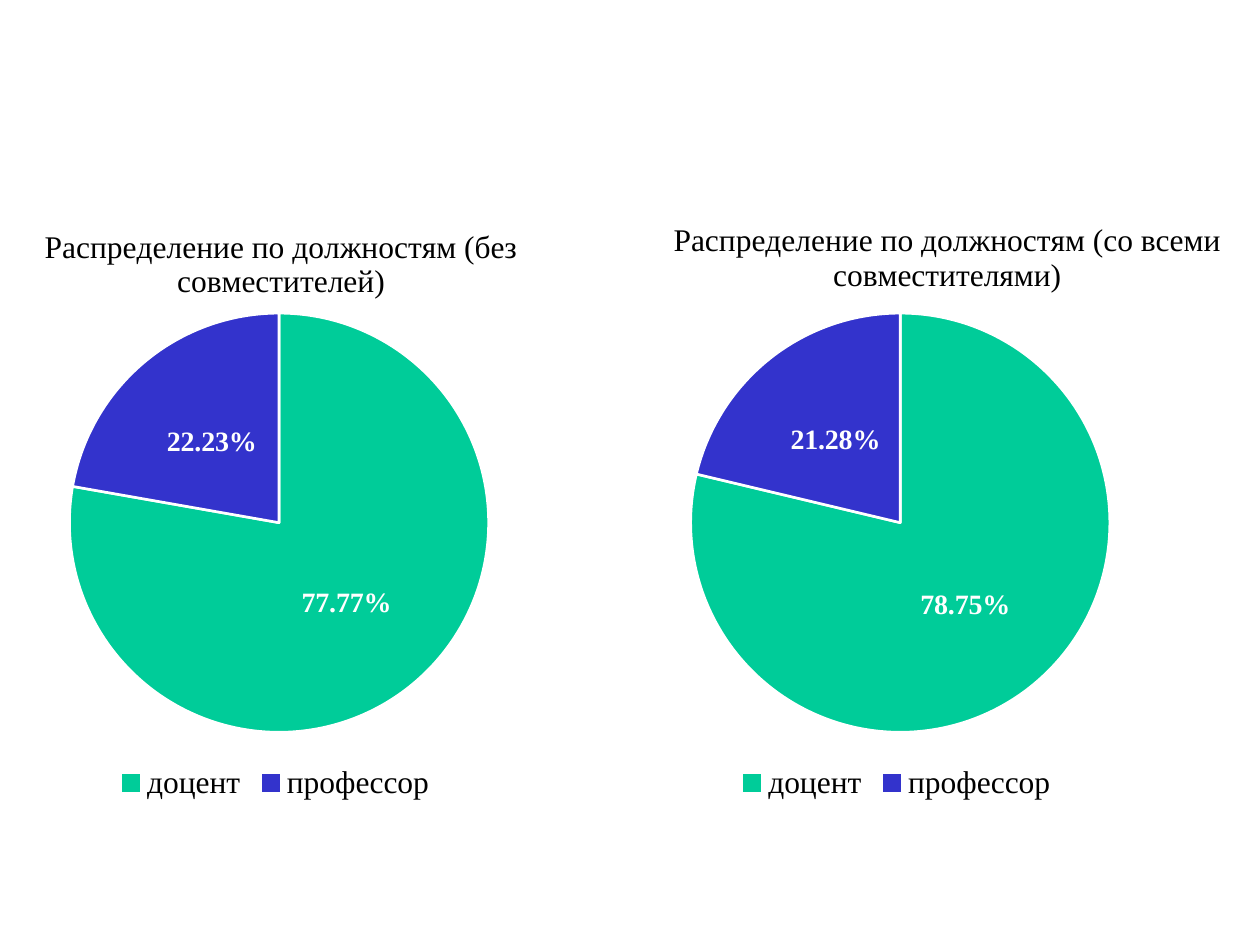
from pptx import Presentation
from pptx.chart.data import CategoryChartData
from pptx.dml.color import RGBColor
from pptx.enum.chart import XL_CHART_TYPE as ChartType
from pptx.enum.chart import XL_LABEL_POSITION as LabelPosition
from pptx.enum.chart import XL_LEGEND_POSITION as LegendPosition
from pptx.oxml import parse_xml
from pptx.oxml.ns import nsdecls, qn
from pptx.util import Pt

FONT = "Times New Roman"
COLORS = {"text": "000000", "white": "FFFFFF", "docent": "00CC99", "professor": "3333CC"}
POSITIONS = {"доцент": "docent", "профессор": "professor"}
TOP, WIDTH, HEIGHT = 112.3, 435.6, 348.5
CHARTS = [
    # left edge, title, title corner as a share of the chart, values
    (-60.5, "Распределение по должностям (без совместителей)", (0.19, 0.04), (0.7777, 0.2223)),
    (294.5, "Распределение по должностям (со всеми совместителями)", (0.2, 0.03), (0.7875, 0.2128)),
]


def color(name):
    return RGBColor.from_string(COLORS[name])


def style_font(font, size, color_name="text", bold=False):
    font.name = FONT
    font.size = Pt(size)
    font.bold = bold
    font.color.rgb = color(color_name)


def set_layout(element, index, **shares):
    """Give a chart part a manual layout, in shares of the chart area."""
    for old in element.findall(qn("c:layout")):
        element.remove(old)
    target = '<c:layoutTarget val="inner"/>' if "w" in shares else ""
    modes = '<c:xMode val="edge"/><c:yMode val="edge"/>'
    values = "".join(f'<c:{key} val="{value}"/>' for key, value in shares.items())
    element.insert(index, parse_xml(
        f'<c:layout {nsdecls("c")}><c:manualLayout>{target}{modes}{values}'
        "</c:manualLayout></c:layout>"))


def add_title(chart, text, corner):
    chart.has_title = True
    title = chart.chart_title
    title.include_in_layout = False
    title.text_frame.text = text
    para = title.text_frame.paragraphs[0]
    style_font(para.font, 18)
    style_font(para.runs[0].font, 18)
    x, y = corner
    set_layout(chart._chartSpace.find(".//" + qn("c:title")), 1, x=x, y=y)


def add_position_pie(page, left, top, width, height, title, corner, values):
    data = CategoryChartData(number_format="0.00%")
    data.categories = list(POSITIONS)
    data.add_series("Series 1", values)
    chart = page.shapes.add_chart(
        ChartType.PIE, Pt(left), Pt(top), Pt(width), Pt(height), data).chart
    style_font(chart.font, 10)
    add_title(chart, title, corner)

    chart.has_legend = True
    chart.legend.position = LegendPosition.BOTTOM
    chart.legend.include_in_layout = False
    style_font(chart.legend.font, 18)

    plot = chart.plots[0]
    plot.vary_by_categories = True
    series = plot.series[0]
    for index, name in enumerate(POSITIONS.values()):
        slice_format = series.points[index].format
        slice_format.fill.solid()
        slice_format.fill.fore_color.rgb = color(name)
        slice_format.line.color.rgb = color("white")
        slice_format.line.width = Pt(1.5)

    labels = series.data_labels
    labels.show_value = True
    labels.show_percentage = False
    labels.number_format = "0.00%"
    labels.number_format_is_linked = False
    labels.position = LabelPosition.CENTER
    style_font(labels.font, 16, "white", bold=True)
    set_layout(chart._chartSpace.find(".//" + qn("c:plotArea")), 0,
               x=0.23, y=0.19, w=0.55, h=0.69)


def main():
    deck = Presentation()
    deck.slide_width, deck.slide_height = Pt(720), Pt(540)
    page = deck.slides.add_slide(deck.slide_layouts[6])
    for left, title, corner, values in CHARTS:
        add_position_pie(page, left, TOP, WIDTH, HEIGHT, title, corner, values)
    deck.save("out.pptx")


if __name__ == "__main__":
    main()
